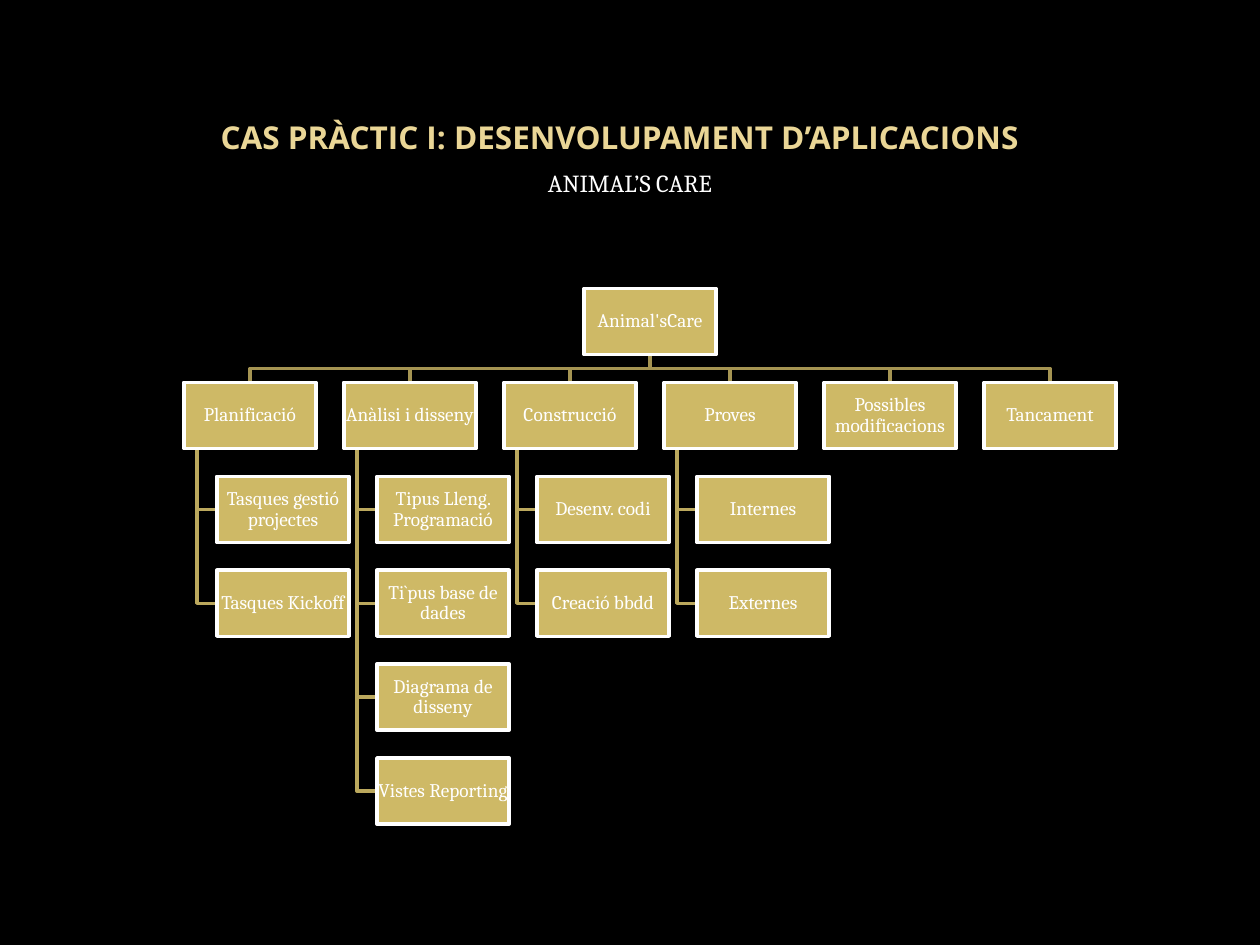
from pptx import Presentation
from pptx.dml.color import RGBColor
from pptx.enum.shapes import MSO_SHAPE
from pptx.enum.text import MSO_ANCHOR, PP_ALIGN
from pptx.util import Pt

RECTANGLE = MSO_SHAPE.RECTANGLE
CENTER = PP_ALIGN.CENTER
TOP, MIDDLE, BOTTOM = MSO_ANCHOR.TOP, MSO_ANCHOR.MIDDLE, MSO_ANCHOR.BOTTOM

COLORS = {
    "background": "000000",
    "title": "EAD696",
    "text": "FFFFFF",
    "box": "CEB966",
    "border": "FFFFFF",
    "branch": "A59452",
    "twig": "BBA85D",
}

# Chart grid, in points: all gaps follow from the box size
BOX_WIDTH = 75.58
BOX_HEIGHT = BOX_WIDTH / 2
COLUMN_PITCH = BOX_WIDTH * 1.21
ROW_PITCH = BOX_HEIGHT * 1.42
CHART_LEFT, CHART_TOP = 105.05, 164.85
INDENT = BOX_WIDTH / 4
STEM = BOX_WIDTH / 10

ROOT = "Animal'sCare"
PHASES = [
    ("Planificació", ["Tasques gestió projectes", "Tasques Kickoff"]),
    ("Anàlisi i disseny", ["Tipus Lleng. Programació", "Ti`pus base de dades",
                           "Diagrama de disseny", "Vistes Reporting"]),
    ("Construcció", ["Desenv. codi", "Creació bbdd"]),
    ("Proves", ["Internes", "Externes"]),
    ("Possibles modificacions", []),
    ("Tancament", []),
]


def color(name):
    return RGBColor.from_string(COLORS[name])


def write_text(box, text, *, size, font="Cambria", tint="text", bold=False,
               anchor=TOP, margins=(3.6, 3.6, 3.6, 3.6), spacing=1.0, before=0):
    frame = box.text_frame
    frame.word_wrap = True
    frame.vertical_anchor = anchor
    (frame.margin_left, frame.margin_top,
     frame.margin_right, frame.margin_bottom) = map(Pt, margins)
    para = frame.paragraphs[0]
    para.alignment = CENTER
    para.line_spacing = spacing
    para.space_before = Pt(before)
    span = para.add_run()
    span.text = text
    span.font.name = font
    span.font.size = Pt(size)
    span.font.bold = bold
    span.font.color.rgb = color(tint)


def add_heading(page, text, left, top, width, height, **style):
    box = page.shapes.add_textbox(Pt(left), Pt(top), Pt(width), Pt(height))
    write_text(box, text, **style)


def add_box(page, text, left, top):
    box = page.shapes.add_shape(RECTANGLE, Pt(left), Pt(top),
                                Pt(BOX_WIDTH), Pt(BOX_HEIGHT))
    box.shadow.inherit = False
    box.fill.solid()
    box.fill.fore_color.rgb = color("box")
    box.line.color.rgb = color("border")
    box.line.width = Pt(2)
    write_text(box, text, size=11, anchor=MIDDLE, spacing=0.9,
               margins=(0.7, 0.7, 0.7, 0.7))


def add_elbow(page, points, tint):
    start, *others = [(Pt(x), Pt(y)) for x, y in points]
    builder = page.shapes.build_freeform(*start)
    builder.add_line_segments(others, close=False)
    elbow = builder.convert_to_shape()
    elbow.shadow.inherit = False
    elbow.fill.background()
    elbow.line.color.rgb = color(tint)
    elbow.line.width = Pt(2)


def column_left(column):
    return CHART_LEFT + column * COLUMN_PITCH


def row_top(row):
    return CHART_TOP + row * ROW_PITCH


def add_lines(page, root_left):
    root_center = root_left + BOX_WIDTH / 2
    root_bottom = row_top(0) + BOX_HEIGHT
    bus = (root_bottom + row_top(1)) / 2
    for column, (_, tasks) in enumerate(PHASES):
        left = column_left(column)
        center = left + BOX_WIDTH / 2
        add_elbow(page, [(root_center, root_bottom), (root_center, bus),
                         (center, bus), (center, row_top(1))], "branch")
        for row in range(2, 2 + len(tasks)):
            middle = row_top(row) + BOX_HEIGHT / 2
            add_elbow(page, [(left + STEM, row_top(1) + BOX_HEIGHT),
                             (left + STEM, middle),
                             (left + INDENT, middle)], "twig")


def add_boxes(page, root_left):
    add_box(page, ROOT, root_left, row_top(0))
    for column, (phase, tasks) in enumerate(PHASES):
        left = column_left(column)
        add_box(page, phase, left, row_top(1))
        for row, task in enumerate(tasks, start=2):
            add_box(page, task, left + INDENT, row_top(row))


def main():
    deck = Presentation()
    deck.slide_width, deck.slide_height = Pt(720), Pt(540)
    page = deck.slides.add_slide(deck.slide_layouts[6])
    page.background.fill.solid()
    page.background.fill.fore_color.rgb = color("background")

    # Headings
    add_heading(page, "CAS PRÀCTIC I: DESENVOLUPAMENT D’APLICACIONS",
                93.6, 48.2, 521.3, 41, size=18, font="Open Sans", tint="title",
                bold=True, anchor=BOTTOM, margins=(3.6, 3.6, 3.6, 0))
    add_heading(page, "ANIMAL’S CARE", 144, 92.2, 432, 41.8, size=14, before=2.8)

    # Organisation chart: lines lie behind the boxes
    root_left = column_left((len(PHASES) - 1) / 2)
    add_lines(page, root_left)
    add_boxes(page, root_left)

    deck.save("out.pptx")


if __name__ == "__main__":
    main()
